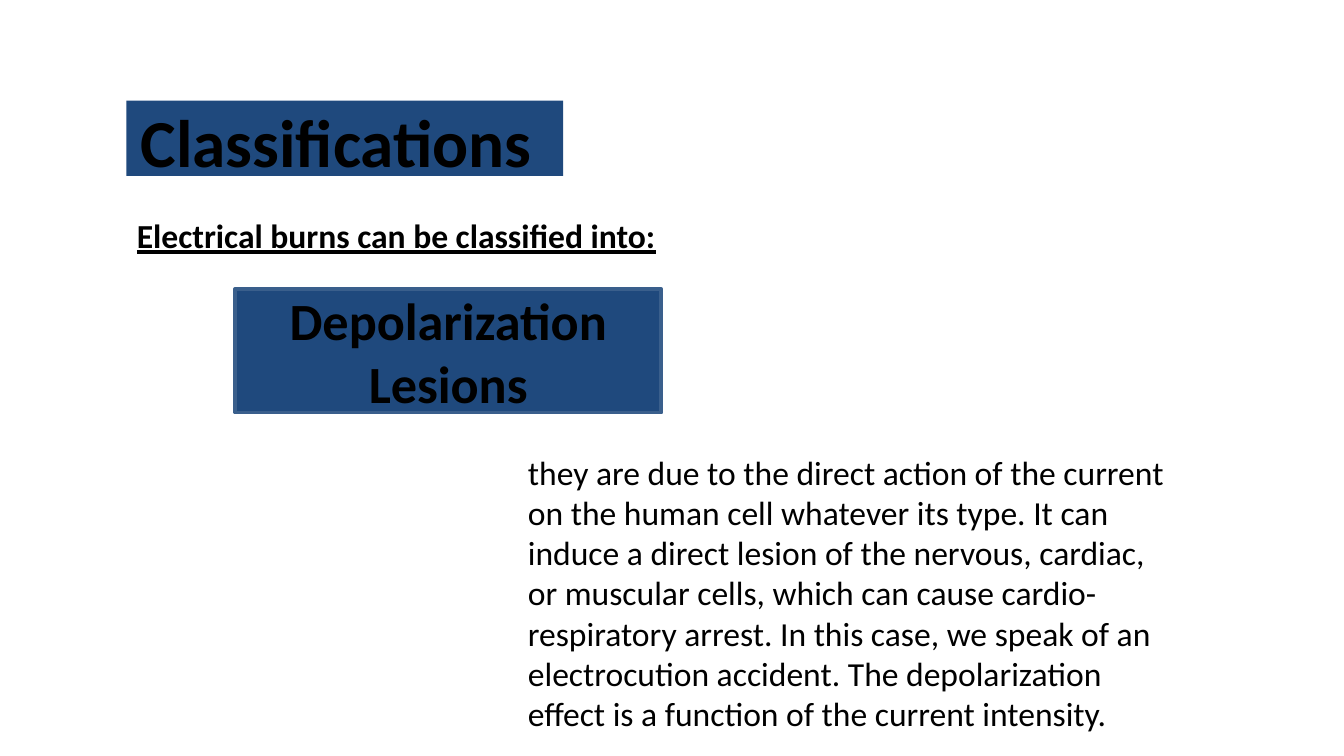
from pptx import Presentation
from pptx.dml.color import RGBColor
from pptx.enum.shapes import MSO_SHAPE
from pptx.enum.text import MSO_ANCHOR, PP_ALIGN
from pptx.util import Inches, Pt

RECT = MSO_SHAPE.RECTANGLE
MIDDLE, TOP = MSO_ANCHOR.MIDDLE, MSO_ANCHOR.TOP
CENTER, LEFT = PP_ALIGN.CENTER, PP_ALIGN.LEFT

THEME = {
    "font": "Calibri",
    "ink": RGBColor.from_string("000000"),
    "navy": RGBColor.from_string("1F497D"),
    "edge": RGBColor.from_string("3A5F8C"),
    "title": Pt(36),
    "space": Pt(39.6),
    "label": Pt(28),
    "body": Pt(18),
}


def add_panel(slide, box):
    """Add a navy rectangle without outline or shadow."""
    panel = slide.shapes.add_shape(RECT, *map(Inches, box))
    panel.shadow.inherit = False
    panel.fill.solid()
    panel.fill.fore_color.rgb = THEME["navy"]
    panel.line.fill.background()
    return panel


def write(shape, runs, align=LEFT, anchor=TOP):
    """Write one paragraph from pairs of text and font values."""
    frame = shape.text_frame
    frame.word_wrap = True
    frame.vertical_anchor = anchor
    para = frame.paragraphs[0]
    para.alignment = align
    for text, style in runs:
        run = para.add_run()
        run.text = text
        run.font.color.rgb = THEME["ink"]
        for key, value in {"name": THEME["font"], **style}.items():
            setattr(run.font, key, value)


# Widescreen slide, 16:9
prs = Presentation()
prs.slide_width = Inches(10)
prs.slide_height = Inches(10 * 9 / 16)
slide = prs.slides.add_slide(prs.slide_layouts[6])

# Title band, with a larger trailing space that shifts the centred word
title = add_panel(slide, (0.94, 0.75, 3.25, 0.56))
write(title, [
    ("Classifications", {"size": THEME["title"], "bold": True}),
    (" ", {"size": THEME["space"], "bold": False}),
], CENTER, MIDDLE)

# Lead-in line
lead = slide.shapes.add_textbox(*map(Inches, (0.92, 1.55, 6.1, 0.4)))
write(lead, [("Electrical burns can be classified into:",
              {"size": THEME["body"], "bold": True, "underline": True})])

# Lesion type
label = add_panel(slide, (1.75, 2.15, 3.17, 0.92))
label.line.color.rgb = THEME["edge"]
label.line.width = Pt(2)
write(label, [("Depolarization Lesions",
               {"size": THEME["label"], "bold": True})], CENTER, MIDDLE)

# Explanation
body = slide.shapes.add_textbox(*map(Inches, (3.83, 3.31, 5, 2.22)))
write(body, [(
    "they are due to the direct action of the current on the human cell "
    "whatever its type. It can induce a direct lesion of the nervous, "
    "cardiac, or muscular cells, which can cause cardio-respiratory arrest. "
    "In this case, we speak of an electrocution accident. The depolarization "
    "effect is a function of the current intensity.",
    {"size": THEME["body"]})])

prs.save("out.pptx")
